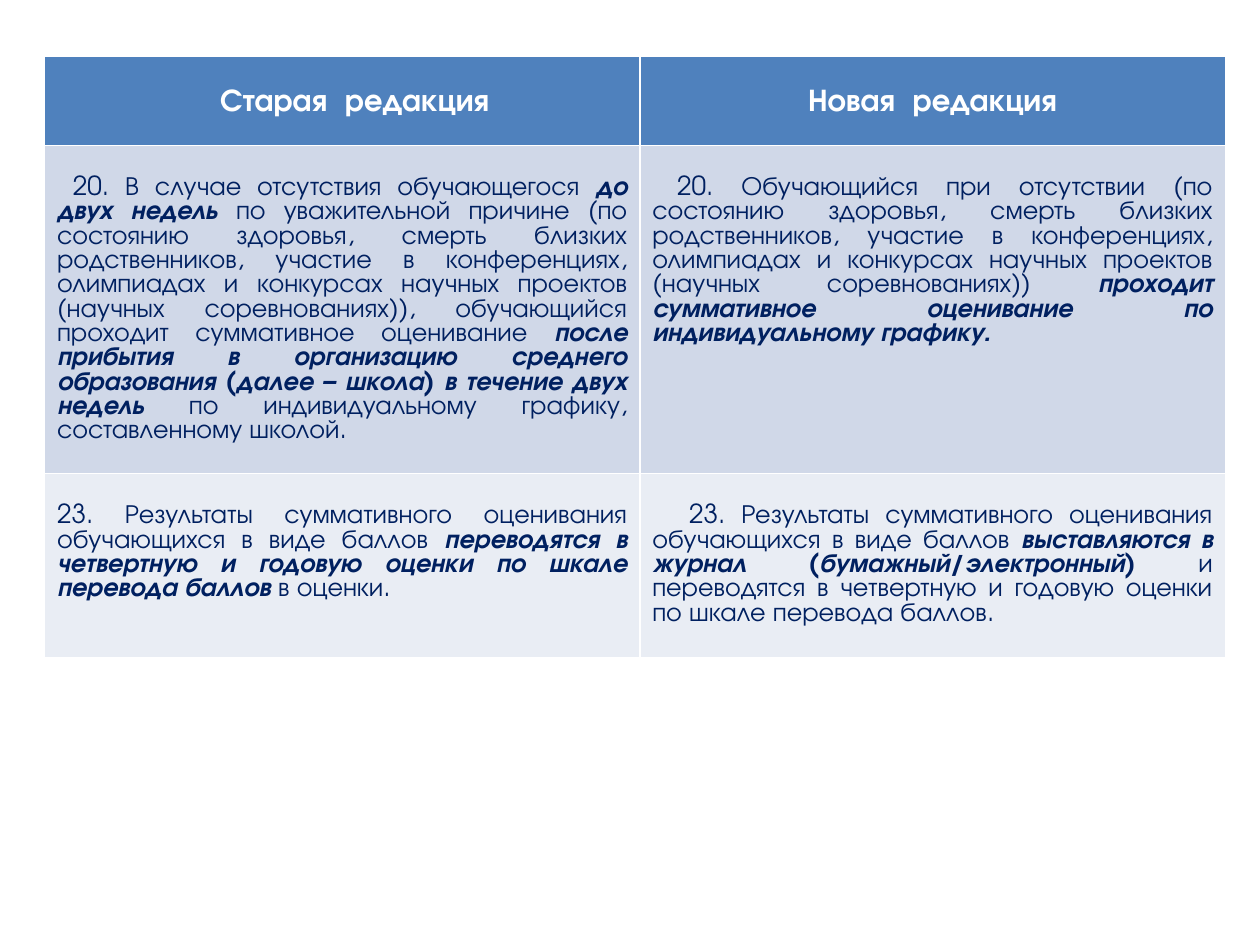
import pptx
import pptx.dml.color
import pptx.enum.text
import pptx.util

Cm = pptx.util.Cm
PP_ALIGN = pptx.enum.text.PP_ALIGN
ANCHOR = pptx.enum.text.MSO_ANCHOR

COLORS = {
    "header": "4F81BD",
    "band_dark": "D0D8E8",
    "band_light": "E9EDF4",
    "header_text": "FFFFFF",
    "body_text": "002060",
}

HEADER = {
    "cell": {"vertical_anchor": ANCHOR.MIDDLE, "margin_left": Cm(0.18),
             "margin_right": Cm(0.18), "margin_top": 0, "margin_bottom": 0},
    "paragraph": {"alignment": PP_ALIGN.CENTER, "line_spacing": 1.15},
    "size": 18,
    "color": "header_text",
}
BODY = {
    "cell": {"vertical_anchor": ANCHOR.TOP, "margin_left": Cm(0.25),
             "margin_right": Cm(0.25), "margin_top": Cm(0.62),
             "margin_bottom": Cm(0.13)},
    "paragraph": {"alignment": PP_ALIGN.JUSTIFY},
    "size": 15,
    "color": "body_text",
}


def set_attributes(target, values):
    for name, value in values.items():
        setattr(target, name, value)


class SlideBuilder:
    """Holds the style and the current slide."""

    font_name = "TeX Gyre Adventor"

    def __init__(self, presentation):
        self.slide = presentation.slides.add_slide(presentation.slide_layouts[6])

    def add_table(self, left, top, widths, heights):
        shape = self.slide.shapes.add_table(
            len(heights), len(widths), Cm(left), Cm(top),
            Cm(sum(widths)), Cm(sum(heights)))
        table = shape.table
        for column, width in zip(table.columns, widths):
            column.width = Cm(width)
        for row, height in zip(table.rows, heights):
            row.height = Cm(height)
        return table

    def fill_cell(self, cell, runs, fill, style, indent=0):
        """Write (text, emphasized) runs; emphasis is bold italic."""
        cell.fill.solid()
        cell.fill.fore_color.rgb = pptx.dml.color.RGBColor.from_string(COLORS[fill])
        set_attributes(cell, style["cell"])
        paragraph = cell.text_frame.paragraphs[0]
        set_attributes(paragraph, style["paragraph"])
        paragraph._p.get_or_add_pPr().set("indent", str(Cm(indent)))
        for text, emphasized in runs:
            run = paragraph.add_run()
            run.text = text
            set_attributes(run.font, {
                "name": self.font_name,
                "size": pptx.util.Pt(style["size"]),
                "bold": emphasized or style is HEADER,
                "italic": emphasized,
            })
            run.font.color.rgb = pptx.dml.color.RGBColor.from_string(
                COLORS[style["color"]])


# Wording shared by the old and new editions
REASONS = ("(по состоянию здоровья, смерть близких родственников, участие в "
           "конференциях, олимпиадах и конкурсах научных проектов "
           "(научных соревнованиях))")
RESULTS = ("23. Результаты суммативного оценивания обучающихся "
           "в виде баллов ")

# Each row: fill, style, then (first-line indent in cm, runs) for each cell
ROWS = [
    ("header", HEADER, [
        (0.5, [("Старая  редакция", False)]),
        (0, [("Новая  редакция", False)]),
    ]),
    ("band_dark", BODY, [
        (0, [
            (" 20. В случае отсутствия обучающегося ", False),
            ("до двух недель ", True),
            (f"по уважительной причине {REASONS}, обучающийся проходит "
             "суммативное оценивание ", False),
            ("после прибытия в организацию среднего образования "
             "(далее – школа) в течение двух недель ", True),
            ("по индивидуальному графику, составленному школой.", False),
        ]),
        (0.5, [
            (f"20. Обучающийся при отсутствии {REASONS} ", False),
            ("проходит суммативное оценивание по индивидуальному графику.", True),
        ]),
    ]),
    ("band_light", BODY, [
        (0, [
            (RESULTS, False),
            ("переводятся в четвертную и годовую оценки по шкале "
             "перевода баллов ", True),
            ("в оценки.", False),
        ]),
        (0.74, [
            (RESULTS, False),
            ("выставляются в журнал (бумажный/электронный) ", True),
            ("и переводятся в четвертную и годовую оценки по шкале "
             "перевода баллов.", False),
        ]),
    ]),
]


def main():
    presentation = pptx.Presentation()
    presentation.slide_width = Cm(25.4)
    presentation.slide_height = Cm(19.05)
    builder = SlideBuilder(presentation)

    # Comparison of the two editions
    table = builder.add_table(0.9, 1.13, [12, 11.8], [1.8, 6.62, 3.7])
    for row, (fill, style, contents) in zip(table.rows, ROWS):
        for cell, (indent, runs) in zip(row.cells, contents):
            builder.fill_cell(cell, runs, fill, style, indent)

    presentation.save("out.pptx")


if __name__ == "__main__":
    main()
